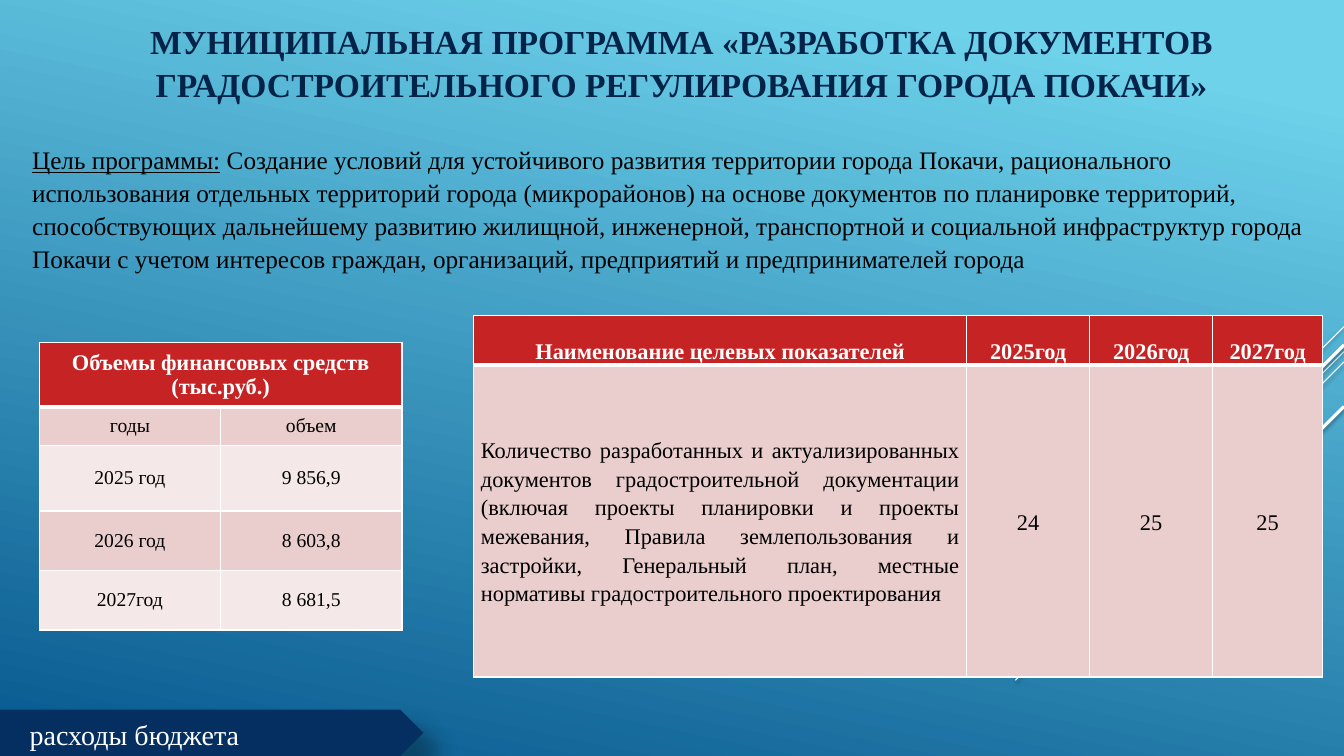
from dataclasses import dataclass

import pptx
import pptx.dml.color
import pptx.enum.shapes
import pptx.enum.text
import pptx.oxml
import pptx.oxml.ns
import pptx.util

Cm = pptx.util.Cm
Pt = pptx.util.Pt
RGBColor = pptx.dml.color.RGBColor
ALIGN = pptx.enum.text.PP_ALIGN
ANCHOR = pptx.enum.text.MSO_ANCHOR
qn = pptx.oxml.ns.qn

WHITE = RGBColor(0xFF, 0xFF, 0xFF)
BLACK = RGBColor(0, 0, 0)
TITLE_NAVY = RGBColor(0x04, 0x23, 0x49)
RIBBON_NAVY = RGBColor(0x05, 0x2F, 0x61)
HEADER_RED = RGBColor(0xC6, 0x23, 0x24)
PINK = RGBColor(0xEA, 0xCD, 0xCD)
PALE_PINK = RGBColor(0xF5, 0xE8, 0xE8)
SKY_BLUE = RGBColor(0x6E, 0xD2, 0xEB)
DEEP_BLUE = RGBColor(0x06, 0x58, 0x8E)

FONT = "Times New Roman"
SLIDE_WIDTH, SLIDE_HEIGHT = 33.87, 19.05


@dataclass
class Ray:
    """A 45-degree line from the right edge, down and to the left."""
    top: float
    reach: float
    width: float


@dataclass
class Shadow:
    opacity: int
    blur: float
    distance: float
    angle: int


@dataclass
class TextBox:
    box: tuple[float, float, float, float]
    runs: list[tuple[str, dict]]
    alignment: ALIGN = ALIGN.LEFT


@dataclass
class TableSpec:
    left: float
    top: float
    columns: list[float]
    rows: list[float]
    cells: list[list[str]]
    margins: tuple[float, float]
    header_anchor: ANCHOR
    body_size: int
    paragraph_format: dict
    first_alignment: ALIGN = ALIGN.CENTER
    merge_header: bool = False


RAYS = [
    Ray(8.23, 2.54, 0.75),
    Ray(8.86, 8.28, 0.75),
    Ray(9.12, 5.27, 0.75),
    Ray(8.69, 4.85, 2.25),
    Ray(10.24, 3.53, 2.25),
]
RAY_SHADOW = Shadow(38, 3.1, 1.6, 90)
RIBBON_SHADOW = Shadow(30, 15, 18, 45)

TITLE = TextBox(
    (0.5, 0.3, 33.35, 3),
    [("МУНИЦИПАЛЬНАЯ ПРОГРАММА «РАЗРАБОТКА ДОКУМЕНТОВ "
      "ГРАДОСТРОИТЕЛЬНОГО РЕГУЛИРОВАНИЯ ГОРОДА ПОКАЧИ»",
      {"size": Pt(24), "bold": True, "color": TITLE_NAVY})],
    ALIGN.CENTER,
)
GOAL = TextBox(
    (0.56, 3.45, 32.92, 3.33),
    [("Цель программы:", {"size": Pt(18), "underline": True, "color": BLACK}),
     (" Создание условий для устойчивого развития территории города Покачи, "
      "рационального использования отдельных территорий города (микрорайонов) "
      "на основе документов по планировке территорий, способствующих дальнейшему "
      "развитию жилищной, инженерной, транспортной и социальной инфраструктур "
      "города Покачи с учетом интересов граждан, организаций, предприятий и "
      "предпринимателей города", {"size": Pt(18), "color": BLACK})],
)
RIBBON_LABEL = TextBox(
    (0.5, 17.88, 9.6, 1.12),
    [("расходы бюджета", {"size": Pt(20), "color": WHITE})],
)

FUNDING = TableSpec(
    0.99, 8.64, [4.57, 4.57], [1.55, 0.97, 1.65, 1.5, 1.5],
    [["Объемы финансовых средств (тыс.руб.)", ""],
     ["годы", "объем"],
     ["2025 год", "9 856,9"],
     ["2026 год", "8 603,8"],
     ["2027год", "8 681,5"]],
    (0.33, 0.13), ANCHOR.MIDDLE, 14, {}, merge_header=True,
)
INDICATORS = TableSpec(
    11.94, 7.95, [12.42, 3.1, 3.1, 2.77], [1.24, 7.87],
    [["Наименование целевых показателей", "2025год", "2026год", "2027год"],
     ["Количество разработанных и актуализированных документов "
      "градостроительной документации (включая проекты планировки и проекты "
      "межевания, Правила землепользования и застройки, Генеральный план, "
      "местные нормативы градостроительного проектирования", "24", "25", "25"]],
    (0.18, 0), ANCHOR.BOTTOM, 16,
    {"line_spacing": 1.15, "space_after": Pt(10)}, ALIGN.JUSTIFY,
)


def set_attributes(target, values: dict) -> None:
    for name, value in values.items():
        setattr(target, name, value)


def add_run(paragraph, text: str, style: dict) -> None:
    run = paragraph.add_run()
    run.text = text
    style = {"name": FONT, **style}
    run.font.color.rgb = style.pop("color")
    set_attributes(run.font, style)


def add_shadow(shape, shadow: Shadow) -> None:
    properties = shape._element.spPr
    effects = properties.find(qn("a:effectLst"))
    if effects is None:
        effects = pptx.oxml.parse_xml(f"<a:effectLst {pptx.oxml.ns.nsdecls('a')}/>")
        properties.append(effects)
    effects.append(pptx.oxml.parse_xml(
        f'<a:outerShdw {pptx.oxml.ns.nsdecls("a")} blurRad="{Pt(shadow.blur)}" '
        f'dist="{Pt(shadow.distance)}" dir="{shadow.angle * 60000}" algn="ctr" '
        f'rotWithShape="0"><a:srgbClr val="{BLACK}">'
        f'<a:alpha val="{shadow.opacity * 1000}"/></a:srgbClr></a:outerShdw>'))


def paint_background(slide) -> None:
    fill = slide.background.fill
    fill.gradient()
    fill.gradient_angle = 258
    for stop, (position, color) in zip(
            fill.gradient_stops, [(0.1, SKY_BLUE), (1, DEEP_BLUE)]):
        stop.position = position
        stop.color.rgb = color


def add_ray(slide, ray: Ray) -> None:
    connector = slide.shapes.add_connector(
        pptx.enum.shapes.MSO_CONNECTOR.STRAIGHT, Cm(SLIDE_WIDTH), Cm(ray.top),
        Cm(SLIDE_WIDTH - ray.reach), Cm(ray.top + ray.reach))
    connector.line.color.rgb = WHITE
    connector.line.width = Pt(ray.width)
    add_shadow(connector, RAY_SHADOW)


def add_text(slide, spec: TextBox) -> None:
    frame = slide.shapes.add_textbox(*map(Cm, spec.box)).text_frame
    frame.word_wrap = True
    paragraph = frame.paragraphs[0]
    set_attributes(paragraph, {"alignment": spec.alignment, "line_spacing": 1.09})
    for text, style in spec.runs:
        add_run(paragraph, text, style)


def add_borders(cell, widths: dict[str, float]) -> None:
    properties = cell._tc.get_or_add_tcPr()
    for side, width in widths.items():
        properties.append(pptx.oxml.parse_xml(
            f'<a:ln{side} {pptx.oxml.ns.nsdecls("a")} w="{Pt(width)}">'
            f'<a:solidFill><a:srgbClr val="{WHITE}"/></a:solidFill></a:ln{side}>'))


def add_table(slide, spec: TableSpec) -> None:
    table = slide.shapes.add_table(
        len(spec.rows), len(spec.columns), Cm(spec.left), Cm(spec.top),
        Cm(sum(spec.columns)), Cm(sum(spec.rows))).table
    for column, width in zip(table.columns, spec.columns):
        column.width = Cm(width)
    for row, height in zip(table.rows, spec.rows):
        row.height = Cm(height)
    if spec.merge_header:
        table.cell(0, 0).merge(table.cell(0, len(spec.columns) - 1))
    side, end = map(Cm, spec.margins)
    for i, texts in enumerate(spec.cells):
        header = i == 0
        for j, text in enumerate(texts):
            cell = table.cell(i, j)
            add_borders(cell, {"L": 1, "R": 1, "T": 3 if i == 1 else 1,
                               "B": 3 if header else 1})
            cell.fill.solid()
            cell.fill.fore_color.rgb = (
                HEADER_RED if header else PINK if i % 2 else PALE_PINK)
            set_attributes(cell, {
                "margin_left": side, "margin_right": side,
                "margin_top": end, "margin_bottom": end,
                "vertical_anchor": spec.header_anchor if header else ANCHOR.MIDDLE})
            paragraph = cell.text_frame.paragraphs[0]
            alignment = ALIGN.CENTER if header or j else spec.first_alignment
            set_attributes(paragraph, {"alignment": alignment, **spec.paragraph_format})
            if text:
                add_run(paragraph, text, {
                    "size": Pt(16 if header else spec.body_size), "bold": header,
                    "color": WHITE if header else BLACK})


def add_ribbon(slide) -> None:
    ribbon = slide.shapes.add_shape(
        pptx.enum.shapes.MSO_SHAPE.PENTAGON, Cm(0), Cm(17.88), Cm(10.67), Cm(1.17))
    ribbon.fill.solid()
    ribbon.fill.fore_color.rgb = RIBBON_NAVY
    ribbon.line.fill.background()
    ribbon.shadow.inherit = False
    add_shadow(ribbon, RIBBON_SHADOW)


def main() -> None:
    presentation = pptx.Presentation()
    presentation.slide_width = Cm(SLIDE_WIDTH)
    presentation.slide_height = Cm(SLIDE_HEIGHT)
    slide = presentation.slides.add_slide(presentation.slide_layouts[6])
    paint_background(slide)
    for ray in RAYS:
        add_ray(slide, ray)
    add_text(slide, TITLE)
    for table in (FUNDING, INDICATORS):
        add_table(slide, table)
    add_text(slide, GOAL)
    add_ribbon(slide)
    add_text(slide, RIBBON_LABEL)
    presentation.save("out.pptx")


if __name__ == "__main__":
    main()
